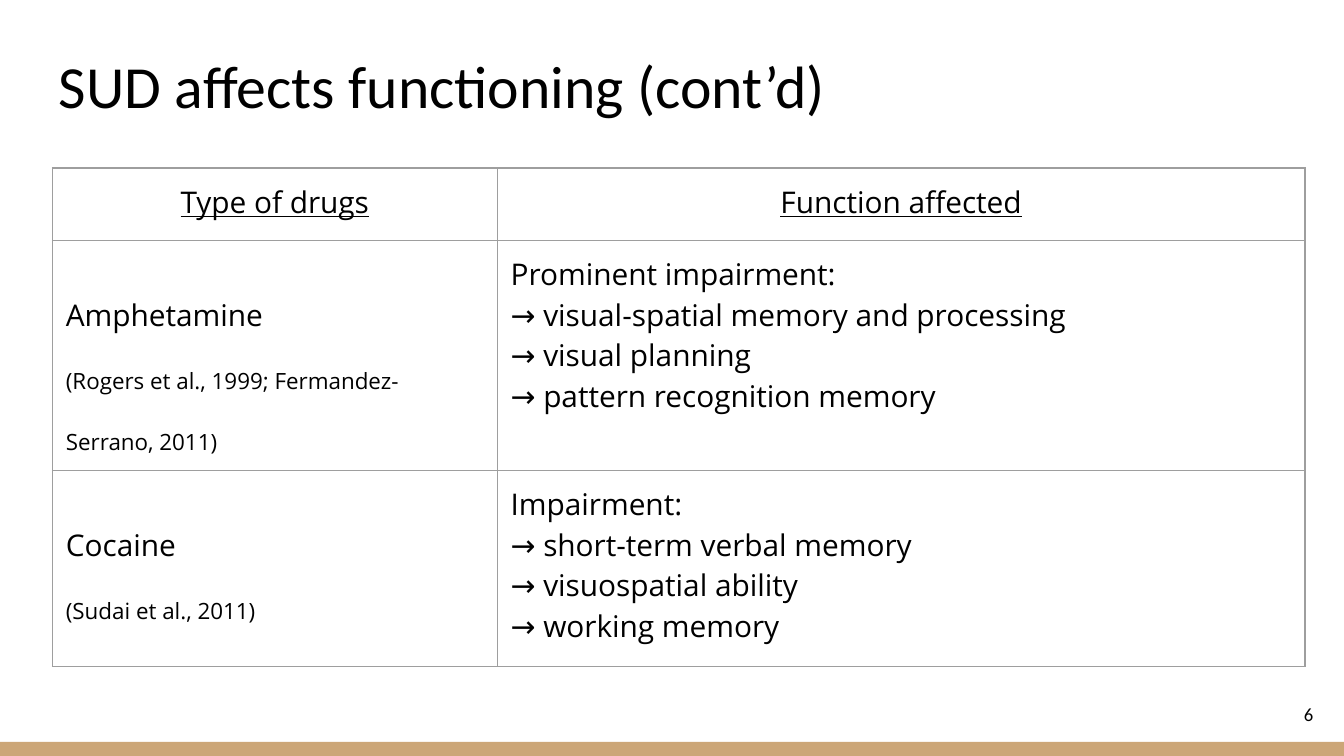
"""Build a slide with a table of drug types and the functions they affect."""
from dataclasses import dataclass

from lxml import etree
from pptx import Presentation
from pptx import util as u
from pptx.dml.color import RGBColor
from pptx.enum import shapes, text
from pptx.oxml import ns


@dataclass(frozen=True)
class Theme:
    """Colours, fonts and type sizes of the slide."""
    ink: str = "000000"
    accent: str = "CCA677"
    border: str = "9E9E9E"
    paper: str = "FFFFFF"
    heading_font: str = "Calibri"
    body_font: str = "Open Sans"
    title_size: int = 32
    body_size: int = 16
    source_size: int = 12
    number_size: int = 10
    border_width: float = 0.75


THEME = Theme()
INSET = u.Inches(0.1)
COLUMNS = (3.31, 6.01)
ROWS = (0.54, 1.71, 1.46)
HEADERS = ("Type of drugs", "Function affected")
DRUGS = (
    (
        ("Amphetamine", "(Rogers et al., 1999; Fermandez-Serrano, 2011)"),
        ("Prominent impairment:", "→ visual-spatial memory and processing",
         "→ visual planning", "→ pattern recognition memory"),
    ),
    (
        ("Cocaine", "(Sudai et al., 2011)"),
        ("Impairment:", "→ short-term verbal memory",
         "→ visuospatial ability", "→ working memory"),
    ),
)


def style_para(para, size, font=THEME.body_font, align=text.PP_ALIGN.LEFT,
               spacing=1.0, underline=False):
    """Set the font, alignment and line spacing of a paragraph."""
    para.alignment = align
    para.line_spacing = spacing
    para.font.name = font
    para.font.size = u.Pt(size)
    para.font.underline = underline
    para.font.color.rgb = RGBColor.from_string(THEME.ink)


def set_insets(holder):
    """Give a text frame or cell equal margins."""
    holder.margin_left = holder.margin_right = INSET
    holder.margin_top = holder.margin_bottom = INSET


def add_text(page, words, area, size, anchor, align=text.PP_ALIGN.LEFT):
    """Add a one-paragraph text box."""
    frame = page.shapes.add_textbox(*map(u.Inches, area)).text_frame
    frame.word_wrap = True
    frame.vertical_anchor = anchor
    set_insets(frame)
    frame.text = words
    style_para(frame.paragraphs[0], size, THEME.heading_font, align)


def add_footer_bar(page):
    """Add the coloured bar along the bottom edge."""
    bar = page.shapes.add_shape(shapes.MSO_SHAPE.RECTANGLE,
                                *map(u.Inches, (0, 5.52, 10, 0.11)))
    bar.shadow.inherit = False
    bar.fill.solid()
    bar.fill.fore_color.rgb = RGBColor.from_string(THEME.accent)
    bar.line.fill.background()


def add_borders(cell):
    """Draw a thin line on every side of a cell."""
    properties = cell._tc.get_or_add_tcPr()
    for position, side in enumerate(("a:lnL", "a:lnR", "a:lnT", "a:lnB")):
        line = etree.Element(ns.qn(side), w=str(u.Pt(THEME.border_width)))
        fill = etree.SubElement(line, ns.qn("a:solidFill"))
        etree.SubElement(fill, ns.qn("a:srgbClr"), val=THEME.border)
        properties.insert(position, line)


def fill_cell(cell, lines):
    """Write lines into a cell and return its paragraphs."""
    set_insets(cell)
    cell.fill.background()
    add_borders(cell)
    cell.text_frame.text = "\n".join(lines)
    return cell.text_frame.paragraphs


def add_drug_table(page):
    """Add the table of drugs and affected functions."""
    area = (0.39, 1.25, sum(COLUMNS), sum(ROWS))
    table = page.shapes.add_table(len(ROWS), len(COLUMNS),
                                  *map(u.Inches, area)).table
    table.first_row = table.horz_banding = False
    for column, width in zip(table.columns, COLUMNS):
        column.width = u.Inches(width)
    for row, height in zip(table.rows, ROWS):
        row.height = u.Inches(height)
    for column, header in enumerate(HEADERS):
        for para in fill_cell(table.cell(0, column), [header]):
            style_para(para, THEME.body_size, align=text.PP_ALIGN.CENTER,
                       underline=True)
    for row, (drug, effects) in enumerate(DRUGS, start=1):
        name, source = fill_cell(table.cell(row, 0), drug)
        style_para(name, THEME.body_size, spacing=2.0)
        style_para(source, THEME.source_size, spacing=2.0)
        for para in fill_cell(table.cell(row, 1), effects):
            style_para(para, THEME.body_size)


def main():
    """Build and save the deck."""
    deck = Presentation()
    deck.slide_width = u.Inches(10)
    deck.slide_height = deck.slide_width * 9 // 16
    page = deck.slides.add_slide(deck.slide_layouts[6])
    page.background.fill.solid()
    page.background.fill.fore_color.rgb = RGBColor.from_string(THEME.paper)
    add_footer_bar(page)
    add_text(page, "SUD affects functioning (cont’d)", (0.34, 0.09, 9.32, 0.91),
             THEME.title_size, text.MSO_ANCHOR.BOTTOM)
    add_drug_table(page)
    add_text(page, "6", (9.27, 5.1, 0.6, 0.43), THEME.number_size,
             text.MSO_ANCHOR.MIDDLE, text.PP_ALIGN.RIGHT)
    deck.save("out.pptx")


if __name__ == "__main__":
    main()
